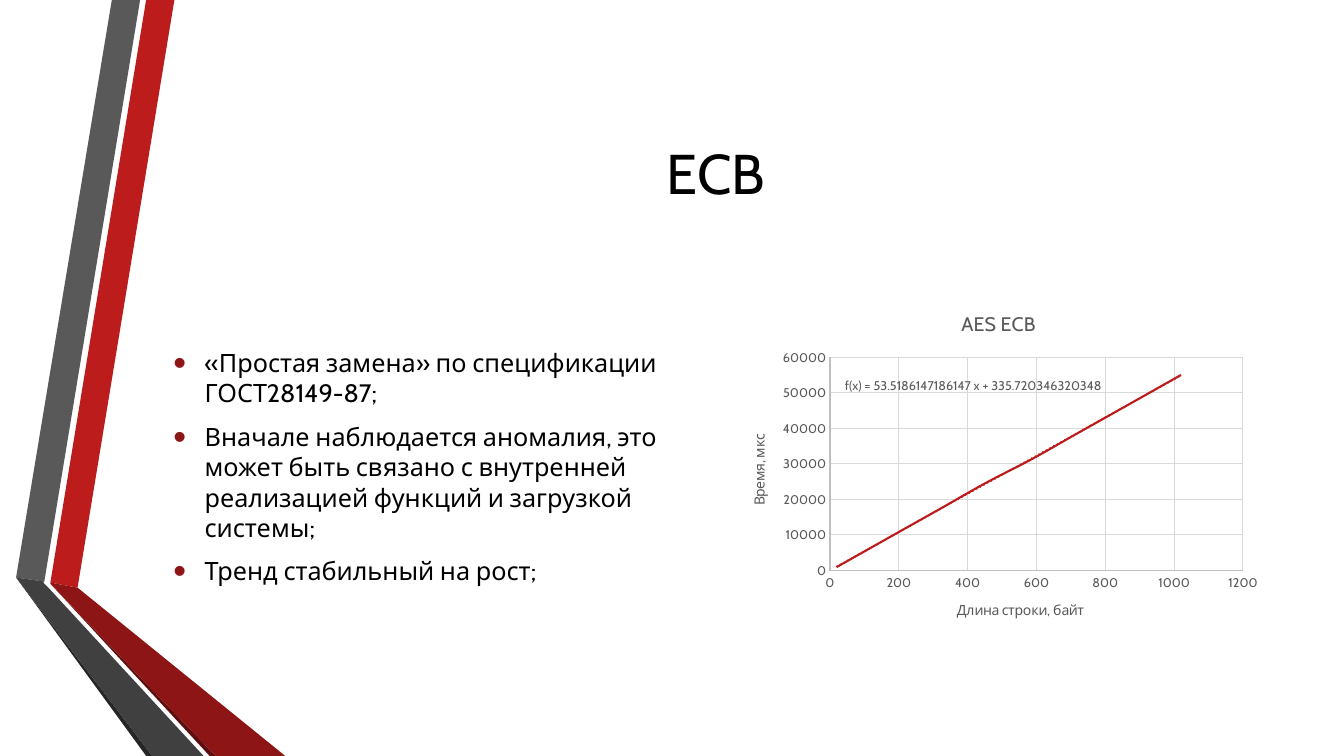
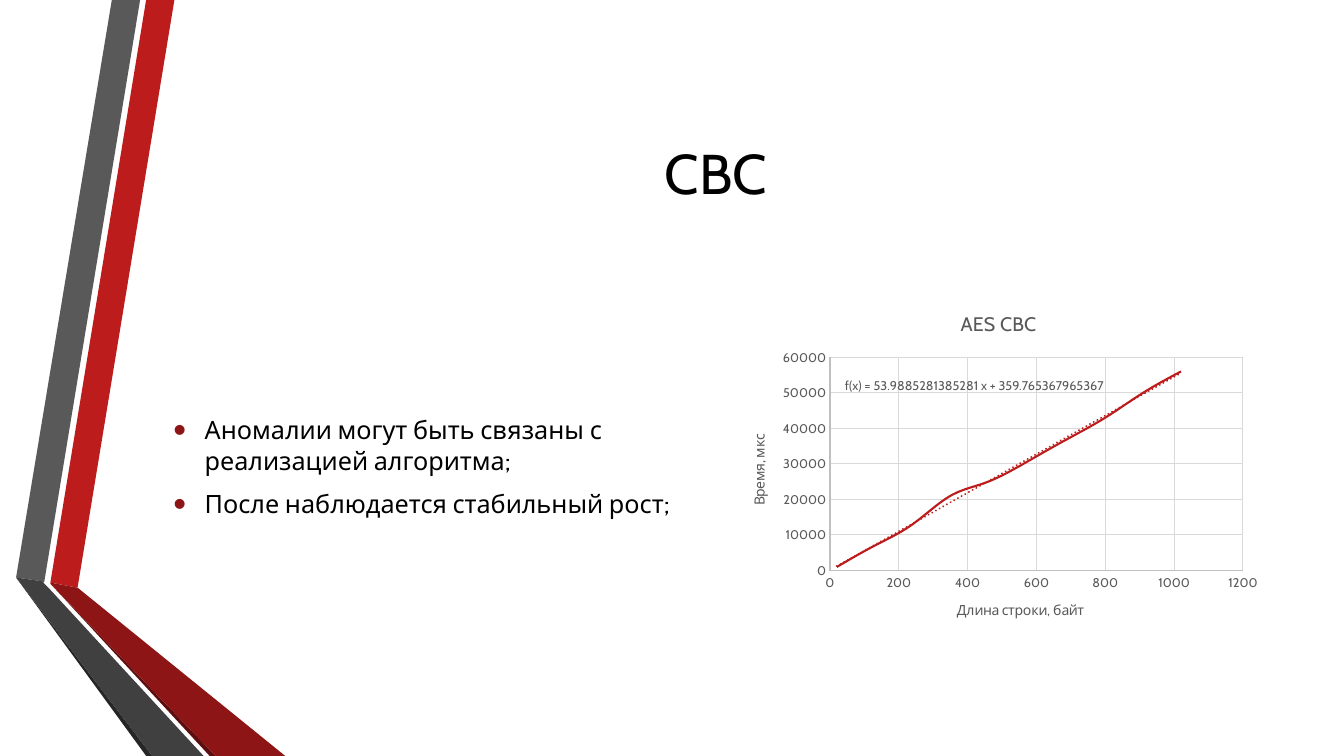
from lxml import etree
from pptx import Presentation
from pptx.chart.data import XyChartData
from pptx.dml.color import RGBColor
from pptx.enum.chart import XL_CHART_TYPE as ChartType, XL_TICK_MARK as TickMark
from pptx.enum.text import MSO_ANCHOR as Anchor, MSO_AUTO_SIZE as AutoSize, PP_ALIGN as Align
from pptx.oxml import parse_xml
from pptx.oxml.ns import nsdecls, qn
from pptx.util import Inches, Pt

FONT = "Cabin"
RED, DARK_RED, BLACK = "BC1C1C", "8D1515", "000000"
GRAY, AXIS_GRAY, GRID_GRAY = "595959", "BFBFBF", "D9D9D9"

PLACES = {
    "title": (1.62, 0.75, 10.96, 1.92),
    "list": (1.62, 2.92, 5.35, 3.42),
    "chart": (7.23, 2.92, 5.35, 3.42),
    "equation": (8.38, 3.7, 2.75, 0.25),
}

RIBBONS = [
    (RED, [(0.5, 5.78), (0.77, 5.83), (1.73, 0), (1.45, 0)]),
    (GRAY, [(1.39, 0), (1.11, 0), (0.16, 5.73), (0.44, 5.77)]),
    ("262626", [(0.16, 5.73), (1.45, 7.5), (1.51, 7.5)]),
    ("5E0E0E", [(0.5, 5.79), (2.08, 7.5), (2.14, 7.5)]),
    (DARK_RED, [(0.5, 5.79), (2.14, 7.5), (2.83, 7.5), (0.77, 5.83), (0.5, 5.78)]),
    ("404040", [(2.02, 7.5), (0.48, 5.83), (0.43, 5.78), (0.44, 5.77), (0.16, 5.73), (1.51, 7.5)]),
]

LENGTHS = [20, 130, 240, 350, 460, 580, 690, 800, 910, 1020]

MODES = [
    {
        "title": "ECB",
        "points": [
            "«Простая замена» по спецификации ГОСТ28149-87;",
            "Вначале наблюдается аномалия, это может быть связано с внутренней "
            "реализацией функций и загрузкой системы;",
            "Тренд стабильный на рост;",
        ],
        "times": [1000, 7000, 13000, 19000, 25000, 31000, 37000, 43000, 49000, 55000],
        "equation": "f(x) = 53.5186147186147 x + 335.720346320348",
    },
    {
        "title": "CBC",
        "points": [
            "Аномалии могут быть связаны с реализацией алгоритма;",
            "После наблюдается стабильный рост;",
        ],
        "times": [1000, 7000, 13000, 21000, 25000, 31000, 37000, 43000, 50000, 56000],
        "equation": "f(x) = 53.9885281385281 x + 359.765367965367",
    },
]


def color(value):
    return RGBColor.from_string(value)


def assign(target, values):
    for name, value in values.items():
        setattr(target, name, value)


def place(name):
    return [Inches(length) for length in PLACES[name]]


def style_font(font, size, value):
    assign(font, {"name": FONT, "size": Pt(size), "bold": False})
    font.color.rgb = color(value)


def style_line(line, value, width):
    line.color.rgb = color(value)
    line.width = Pt(width)


def move_placeholders(layout):
    for holder in list(layout.placeholders):
        if holder.placeholder_format.idx > 1:
            holder.element.getparent().remove(holder.element)
    for holder, name in zip(layout.placeholders, ("title", "list")):
        assign(holder, dict(zip(("left", "top", "width", "height"), place(name))))


def add_ribbon(slide, fill, corners):
    start, *others = [(Inches(x), Inches(y)) for x, y in corners]
    outline = slide.shapes.build_freeform(*start)
    outline.add_line_segments(others, close=True)
    ribbon = outline.convert_to_shape()
    ribbon.fill.solid()
    ribbon.fill.fore_color.rgb = color(fill)
    ribbon.line.fill.background()
    ribbon.shadow.inherit = False
    return ribbon


def share_ribbons(slide):
    backdrop = slide.slide_layout.shapes.element
    for position, (fill, corners) in enumerate(RIBBONS, start=2):
        backdrop.insert(position, add_ribbon(slide, fill, corners).element)


def write(frame, lines, size, value, paragraph_format):
    frame.text = "\n".join(lines)
    for paragraph in frame.paragraphs:
        assign(paragraph, paragraph_format)
        for run in paragraph.runs:
            style_font(run.font, size, value)


def fill_title(slide, text):
    frame = slide.shapes.title.text_frame
    assign(frame, {"vertical_anchor": Anchor.MIDDLE, "auto_size": AutoSize.NONE})
    write(frame, [text], 40, BLACK, {"alignment": Align.CENTER})


def fill_list(slide, points):
    body = slide.placeholders[1]
    assign(body.text_frame, {"vertical_anchor": Anchor.MIDDLE, "auto_size": AutoSize.NONE})
    spacing = {"alignment": Align.LEFT, "space_before": Pt(3.6), "space_after": Pt(6)}
    write(body.text_frame, points, 18, BLACK, spacing)
    indent = Inches(0.31)
    for properties in body.element.iter(qn("a:pPr")):
        properties.set("marL", str(indent))
        properties.set("indent", str(-indent))
        bullet_color = etree.SubElement(properties, qn("a:buClr"))
        etree.SubElement(bullet_color, qn("a:srgbClr"), val=DARK_RED)
        etree.SubElement(properties, qn("a:buSzPct"), val="145000")
        etree.SubElement(properties, qn("a:buFont"), typeface="Arial")
        etree.SubElement(properties, qn("a:buChar"), char="•")


def style_axis(axis, title, maximum, step):
    assign(axis, {
        "minimum_scale": 0,
        "maximum_scale": maximum,
        "major_unit": step,
        "major_tick_mark": TickMark.NONE,
        "minor_tick_mark": TickMark.NONE,
        "has_major_gridlines": True,
    })
    style_line(axis.format.line, AXIS_GRAY, 0.75)
    style_line(axis.major_gridlines.format.line, GRID_GRAY, 0.75)
    style_font(axis.tick_labels.font, 9, GRAY)
    write(axis.axis_title.text_frame, [title], 10, GRAY, {})


def add_trend(chart):
    for lengths in chart.element.iter(qn("c:xVal")):
        lengths.addprevious(parse_xml(
            f'<c:trendline {nsdecls("c", "a")}><c:spPr><a:ln w="{Pt(1.5)}" cap="rnd">'
            f'<a:solidFill><a:srgbClr val="{RED}"/></a:solidFill><a:prstDash val="sysDot"/>'
            '</a:ln></c:spPr><c:trendlineType val="linear"/>'
            '<c:dispRSqr val="0"/><c:dispEq val="0"/></c:trendline>'
        ))


def add_timing_chart(slide, title, times):
    timing = XyChartData()
    measured = timing.add_series("Series 1")
    for length, time in zip(LENGTHS, times):
        measured.add_data_point(length, time)
    chart = slide.shapes.add_chart(
        ChartType.XY_SCATTER_SMOOTH_NO_MARKERS, *place("chart"), timing
    ).chart
    style_font(chart.font, 10, BLACK)
    assign(chart, {"has_legend": False, "has_title": True})
    write(chart.chart_title.text_frame, [title], 14, GRAY, {})
    chart.chart_title.include_in_layout = False
    chart.plots[0].vary_by_categories = False
    style_line(chart.plots[0].series[0].format.line, RED, 1.5)
    for smooth in chart.element.iter(qn("c:smooth")):
        smooth.set("val", "1")
    style_axis(chart.category_axis, "Длина строки, байт", 1200, 200)
    style_axis(chart.value_axis, "Время, мкс", 60000, 10000)
    add_trend(chart)


def add_equation(slide, text):
    frame = slide.shapes.add_textbox(*place("equation")).text_frame
    margins = dict.fromkeys(("margin_left", "margin_right", "margin_top", "margin_bottom"), 0)
    assign(frame, {"word_wrap": True, "vertical_anchor": Anchor.MIDDLE, **margins})
    write(frame, [text], 9, GRAY, {"alignment": Align.LEFT})


def main():
    deck = Presentation()
    assign(deck, {"slide_width": Inches(13.33), "slide_height": Inches(7.5)})
    layout = deck.slide_layouts[1]
    move_placeholders(layout)
    for number, mode in enumerate(MODES):
        slide = deck.slides.add_slide(layout)
        if number == 0:
            share_ribbons(slide)
        fill_title(slide, mode["title"])
        fill_list(slide, mode["points"])
        add_timing_chart(slide, f"AES {mode['title']}", mode["times"])
        add_equation(slide, mode["equation"])
    deck.save("out.pptx")


if __name__ == "__main__":
    main()
